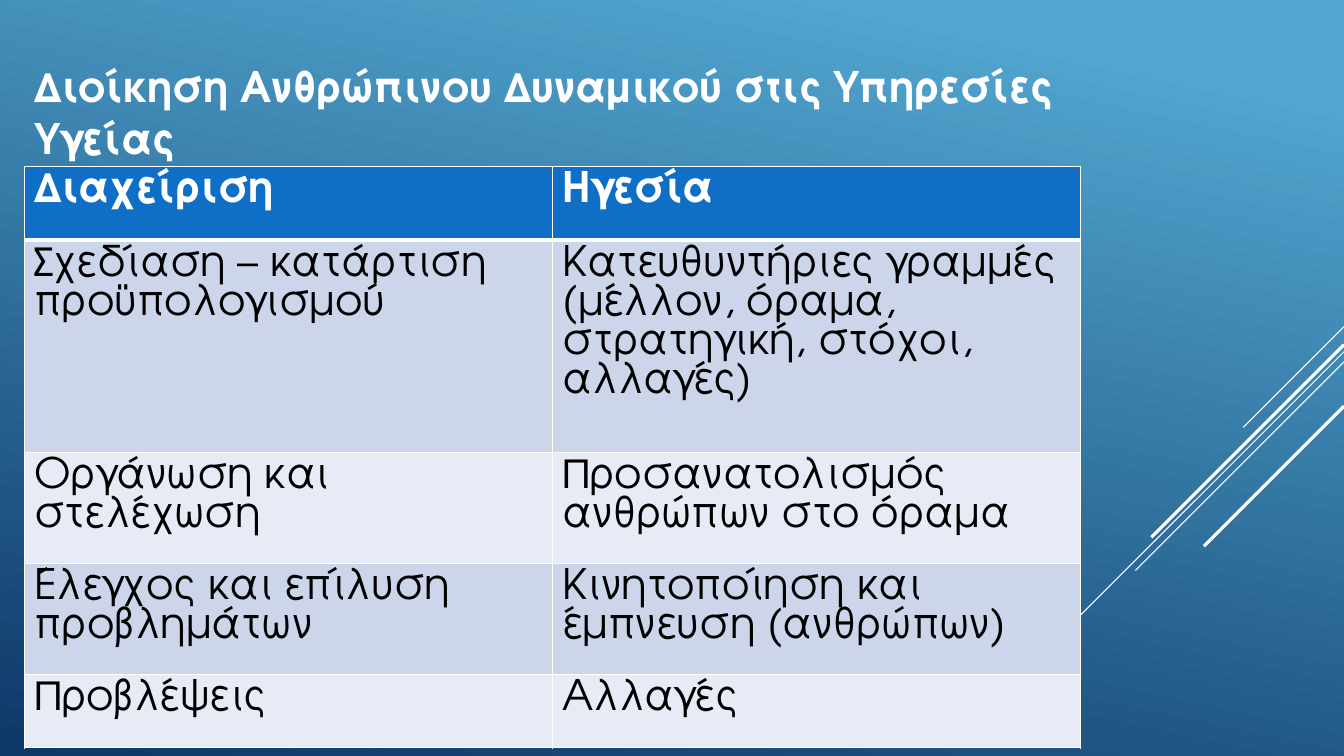
"""Builds a slide that compares management and leadership in health services."""
from dataclasses import dataclass

from lxml.etree import SubElement
from pptx import Presentation
from pptx.dml.color import RGBColor as RGB
from pptx.enum.shapes import MSO_CONNECTOR as Connector
from pptx.enum.text import MSO_ANCHOR as Anchor, MSO_AUTO_SIZE as AutoSize, PP_ALIGN as Align
from pptx.oxml.ns import qn
from pptx.util import Inches, Pt


@dataclass(frozen=True)
class Theme:
    font: str = "TeX Gyre Adventor"
    text_size: int = 30
    line_pitch: int = 28
    title_pitch: int = 37
    white: str = "FFFFFF"
    black: str = "000000"
    header: str = "0F6FC6"
    bands: tuple = ("CCD5EA", "E7EBF5")
    sky: tuple = ((0.1, "51A5CF"), (1.0, "0D3868"))
    sky_angle: int = 258


class SlideBuilder:
    def __init__(self, slide, theme):
        self.slide = slide
        self.theme = theme

    def background(self):
        fill = self.slide.background.fill
        fill.gradient()
        fill.gradient_angle = self.theme.sky_angle
        for stop, (position, color) in zip(fill.gradient_stops, self.theme.sky):
            stop.position = position
            stop.color.rgb = RGB.from_string(color)

    def style(self, paragraph, color, bold, pitch):
        paragraph.alignment = Align.LEFT
        paragraph.line_spacing = Pt(pitch)
        paragraph.space_before = paragraph.space_after = Pt(0)
        font = paragraph.font
        font.name, font.size, font.bold = self.theme.font, Pt(self.theme.text_size), bold
        font.color.rgb = RGB.from_string(color)

    def title(self, text, left, top, width, height):
        title = self.slide.shapes.title
        title.left, title.top = Inches(left), Inches(top)
        title.width, title.height = Inches(width), Inches(height)
        frame = title.text_frame
        frame.text = text
        frame.word_wrap = True
        frame.auto_size = AutoSize.NONE
        frame.vertical_anchor = Anchor.MIDDLE
        self.style(frame.paragraphs[0], self.theme.white, True, self.theme.title_pitch)

    def ray(self, right, top, left, bottom, weight):
        ray = self.slide.shapes.add_connector(
            Connector.STRAIGHT, Inches(right), Inches(top), Inches(left), Inches(bottom))
        ray.line.color.rgb = RGB.from_string(self.theme.white)
        ray.line.width = Pt(weight)
        SubElement(ray._element.spPr, qn("a:effectLst"))

    def border(self, cell, side, weight):
        properties = cell._tc.get_or_add_tcPr()
        edge = SubElement(properties, qn(f"a:ln{side}"), w=str(Pt(weight)))
        fill = SubElement(edge, qn("a:solidFill"))
        SubElement(fill, qn("a:srgbClr"), val=self.theme.white)

    def cell(self, cell, text, row):
        is_header = row == 0
        for side in "LRTB":
            thick = (is_header and side == "B") or (row == 1 and side == "T")
            self.border(cell, side, 3 if thick else 1)
        cell.fill.solid()
        color = self.theme.header if is_header else self.theme.bands[(row - 1) % 2]
        cell.fill.fore_color.rgb = RGB.from_string(color)
        cell.text = text
        ink = self.theme.white if is_header else self.theme.black
        self.style(cell.text_frame.paragraphs[0], ink, is_header, self.theme.line_pitch)

    def table(self, rows, left, top, width, heights):
        frame = self.slide.shapes.add_table(
            len(rows), len(rows[0]), Inches(left), Inches(top),
            Inches(width), Inches(sum(heights)))
        for row, (texts, height) in enumerate(zip(rows, heights)):
            frame.table.rows[row].height = Inches(height)
            for column, text in enumerate(texts):
                self.cell(frame.table.cell(row, column), text, row)


RAYS = [
    (3.24, 1.0, 0.75),
    (3.49, 3.26, 0.75),
    (3.59, 2.07, 0.75),
    (3.42, 1.91, 2.25),
    (4.03, 1.39, 2.25),
]
COMPARISON = [
    ("Διαχείριση", "Ηγεσία"),
    ("Σχεδίαση – κατάρτιση προϋπολογισμού",
     "Κατευθυντήριες γραμμές (μέλλον, όραμα, στρατηγική, στόχοι, αλλαγές)"),
    ("Οργάνωση και στελέχωση", "Προσανατολισμός ανθρώπων στο όραμα"),
    ("Έλεγχος και επίλυση προβλημάτων", "Κινητοποίηση και έμπνευση (ανθρώπων)"),
    ("Προβλέψεις", "Αλλαγές"),
]


def main():
    deck = Presentation()
    deck.slide_width, deck.slide_height = Inches(13.33), Inches(7.5)
    builder = SlideBuilder(deck.slides.add_slide(deck.slide_layouts[5]), Theme())
    builder.background()
    for top, reach, weight in RAYS:
        builder.ray(13.33, top, 13.33 - reach, top + reach, weight)
    builder.title("Διοίκηση Ανθρώπινου Δυναμικού στις Υπηρεσίες Υγείας",
                  0.24, 0.5, 11.58, 1.21)
    builder.table(COMPARISON, 0.24, 1.65, 10.48, (0.73, 2.11, 1.1, 1.1, 0.73))
    deck.save("out.pptx")


if __name__ == "__main__":
    main()
